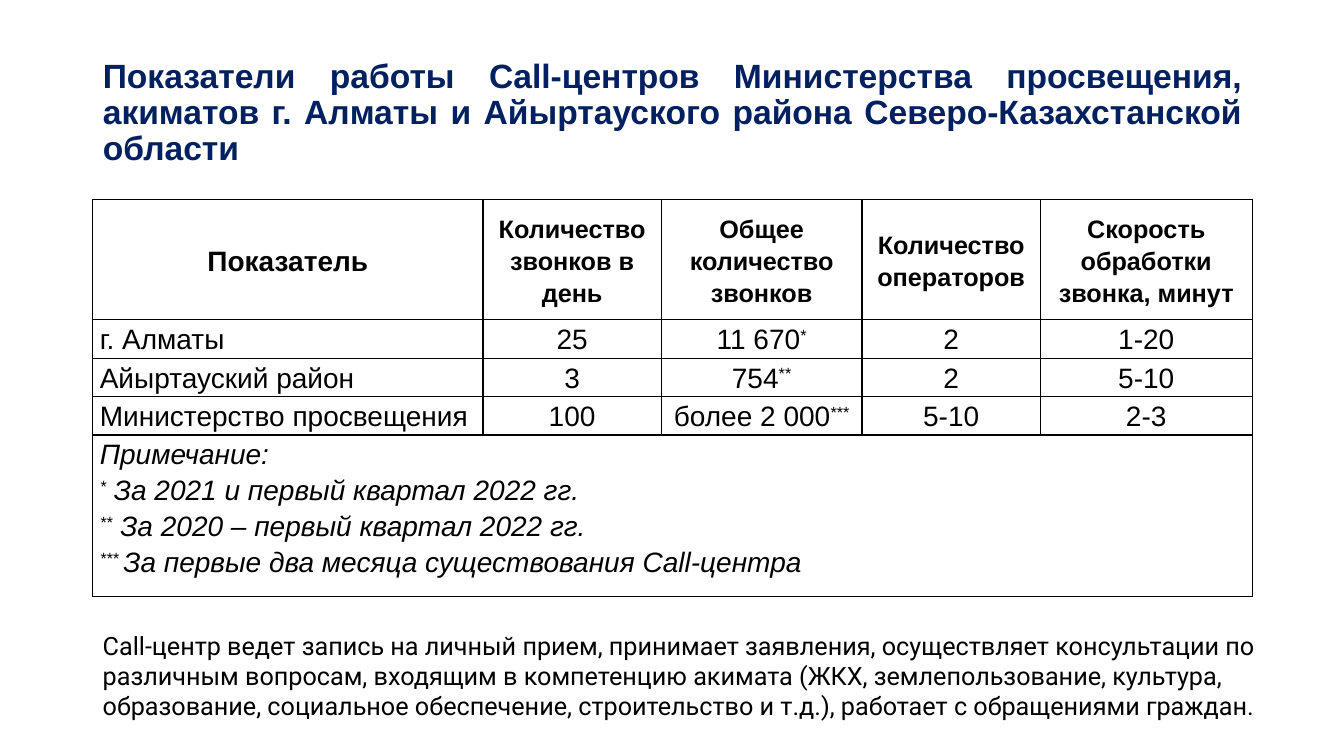
from lxml import etree
from pptx import Presentation
from pptx.dml.color import RGBColor
from pptx.enum.text import MSO_ANCHOR, MSO_AUTO_SIZE, PP_ALIGN
from pptx.oxml.ns import qn
from pptx.util import Inches, Pt

NAVY = RGBColor(0x00, 0x20, 0x60)
BLACK = RGBColor(0x00, 0x00, 0x00)
WHITE = RGBColor(0xFF, 0xFF, 0xFF)
CENTER, JUSTIFY, LEFT = PP_ALIGN.CENTER, PP_ALIGN.JUSTIFY, PP_ALIGN.LEFT
MIDDLE, TOP = MSO_ANCHOR.MIDDLE, MSO_ANCHOR.TOP
TITLE_ONLY_LAYOUT = 5

TITLE = ("Показатели работы Call-центров Министерства просвещения, "
         "акиматов г. Алматы и Айыртауского района Северо-Казахстанской области")
HEADINGS = ["Показатель", "Количество звонков в день", "Общее количество звонков",
            "Количество операторов", "Скорость обработки звонка, минут"]
# Text between ^ marks is superscript
CALL_CENTRES = [
    ["г. Алматы", "25", "11 670^*^", "2", "1-20"],
    ["Айыртауский район", "3", "754^**^", "2", "5-10"],
    ["Министерство просвещения", "100", "более 2 000^***^", "5-10", "2-3"],
]
FOOTNOTES = ["Примечание:",
             "^*^ За 2021 и первый квартал 2022 гг.",
             "^**^ За 2020 – первый квартал 2022 гг.",
             "^*** ^За первые два месяца существования Call-центра"]
SUMMARY = ("Call-центр ведет запись на личный прием, принимает заявления, осуществляет "
           "консультации по различным вопросам, входящим в компетенцию акимата (ЖКХ, "
           "землепользование, культура, образование, социальное обеспечение, "
           "строительство и т.д.), работает с обращениями граждан.")

COLUMN_WIDTHS = [3.87, 1.77, 1.99, 1.77, 2.1]
ROW_HEIGHTS = [1.19, 0.38, 0.38, 0.38, 1.6]


def write(paragraph, text, align, spacing, size, font="Arial", color=BLACK,
          bold=False, italic=False):
    """Fill a paragraph, raising the parts enclosed in ^ marks."""
    paragraph.alignment = align
    paragraph.line_spacing = spacing
    font_format = {"name": font, "size": Pt(size), "bold": bold, "italic": italic}
    for position, part in enumerate(text.split("^")):
        if not part:
            continue
        run = paragraph.add_run()
        run.text = part
        for attribute, value in font_format.items():
            setattr(run.font, attribute, value)
        run.font.color.rgb = color
        if position % 2:
            run.font._element.set("baseline", "30000")


def add_borders(cell):
    properties = cell._tc.get_or_add_tcPr()
    for side in ("lnL", "lnR", "lnT", "lnB"):
        line = etree.SubElement(properties, qn(f"a:{side}"), w=str(Pt(1)))
        fill = etree.SubElement(line, qn("a:solidFill"))
        etree.SubElement(fill, qn("a:srgbClr"), val=str(BLACK))


def format_cell(cell, anchor):
    add_borders(cell)
    cell.fill.solid()
    cell.fill.fore_color.rgb = WHITE
    cell_format = {"vertical_anchor": anchor,
                   "margin_left": Inches(0.07), "margin_right": Inches(0.07),
                   "margin_top": 0, "margin_bottom": 0}
    for attribute, value in cell_format.items():
        setattr(cell, attribute, value)


def place_title(slide, left, top, width, height):
    title = slide.shapes.title
    box = {"left": left, "top": top, "width": width, "height": height}
    for attribute, value in box.items():
        setattr(title, attribute, Inches(value))
    frame = title.text_frame
    frame.auto_size = MSO_AUTO_SIZE.NONE
    frame.vertical_anchor = MIDDLE
    write(frame.paragraphs[0], TITLE, JUSTIFY, 0.9, 24, color=NAVY, bold=True)


def add_call_table(slide, left, top, width, height):
    table = slide.shapes.add_table(
        len(ROW_HEIGHTS), len(COLUMN_WIDTHS),
        Inches(left), Inches(top), Inches(width), Inches(height)).table
    table.first_row = table.horz_banding = False
    for column, share in zip(table.columns, COLUMN_WIDTHS):
        column.width = Inches(width * share / sum(COLUMN_WIDTHS))
    for row, share in zip(table.rows, ROW_HEIGHTS):
        row.height = Inches(height * share / sum(ROW_HEIGHTS))

    for r, row in enumerate(table.rows):
        for cell in row.cells:
            format_cell(cell, MIDDLE if r == 0 else TOP)

    for c, heading in enumerate(HEADINGS):
        write(table.cell(0, c).text_frame.paragraphs[0], heading, CENTER, 1.15,
              18 if c else 20, bold=True)
    for r, values in enumerate(CALL_CENTRES, start=1):
        for c, value in enumerate(values):
            write(table.cell(r, c).text_frame.paragraphs[0], value,
                  CENTER if c else LEFT, 1.15, 20)

    last_row = len(ROW_HEIGHTS) - 1
    notes_cell = table.cell(last_row, 0)
    notes_cell.merge(table.cell(last_row, len(COLUMN_WIDTHS) - 1))
    frame = notes_cell.text_frame
    for i, footnote in enumerate(FOOTNOTES):
        paragraph = frame.add_paragraph() if i else frame.paragraphs[0]
        write(paragraph, footnote, JUSTIFY, 1.15, 20, italic=True)


def add_summary(slide, left, top, width, height):
    frame = slide.shapes.add_textbox(
        Inches(left), Inches(top), Inches(width), Inches(height)).text_frame
    frame.word_wrap = True
    frame.auto_size = MSO_AUTO_SIZE.SHAPE_TO_FIT_TEXT
    write(frame.paragraphs[0], SUMMARY, LEFT, 1.0, 18, font="Roboto")


def main():
    presentation = Presentation()
    presentation.slide_width = Inches(13.33)
    presentation.slide_height = Inches(7.5)
    slide = presentation.slides.add_slide(presentation.slide_layouts[TITLE_ONLY_LAYOUT])
    place_title(slide, 0.92, 0.4, 11.5, 1.45)
    add_call_table(slide, 0.92, 1.98, 11.5, 3.94)
    add_summary(slide, 0.92, 6.2, 11.72, 1.01)
    presentation.save("out.pptx")


if __name__ == "__main__":
    main()
